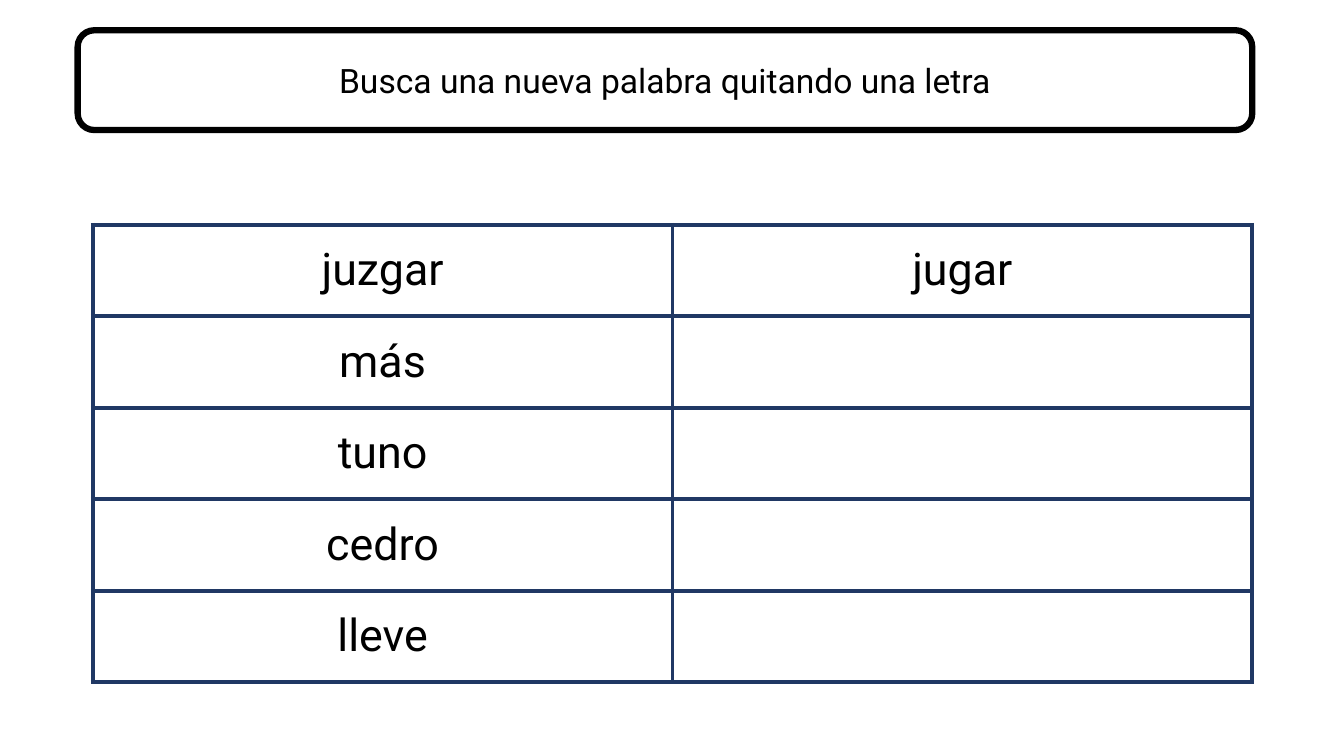
from lxml import etree
from pptx import Presentation
from pptx.dml.color import RGBColor
from pptx.enum import shapes, text
from pptx.oxml import ns
from pptx import util as u

COLORS = {"paper": "FFFFFF", "ink": "000000", "grid": "203864"}
FONT = "Roboto"
WORDS = [("juzgar", "jugar"), ("más", ""), ("tuno", ""), ("cedro", ""), ("lleve", "")]


def color(name):
    return RGBColor.from_string(COLORS[name])


def paint(obj, name):
    obj.fill.solid()
    obj.fill.fore_color.rgb = color(name)


def write(tf, words, size):
    p = tf.paragraphs[0]
    p.text = words
    p.alignment = text.PP_ALIGN.CENTER
    for r in p.runs:
        r.font.name = FONT
        r.font.size = u.Pt(size)
        r.font.color.rgb = color("ink")


def add_borders(cell, name, width):
    props = cell._tc.get_or_add_tcPr()
    for i, side in enumerate(("lnL", "lnR", "lnT", "lnB")):
        ln = etree.Element(ns.qn("a:" + side), w=str(u.Pt(width)))
        fill = etree.SubElement(ln, ns.qn("a:solidFill"))
        etree.SubElement(fill, ns.qn("a:srgbClr"), val=COLORS[name])
        props.insert(i, ln)


def add_instruction(slide, box, words):
    sp = slide.shapes.add_shape(shapes.MSO_SHAPE.ROUNDED_RECTANGLE, *box)
    sp.shadow.inherit = False
    paint(sp, "paper")
    sp.line.color.rgb = color("ink")
    sp.line.width = u.Pt(4.5)
    tf = sp.text_frame
    tf.word_wrap = True
    tf.vertical_anchor = text.MSO_ANCHOR.MIDDLE
    write(tf, words, 24)


def add_word_table(slide, box, rows):
    table = slide.shapes.add_table(len(rows), len(rows[0]), *box).table
    for row, words in zip(table.rows, rows):
        for cell, word in zip(row.cells, words):
            paint(cell, "paper")
            add_borders(cell, "grid", 3)
            cell.vertical_anchor = text.MSO_ANCHOR.MIDDLE
            write(cell.text_frame, word, 32)


def inches(*lengths):
    return [u.Inches(n) for n in lengths]


def main():
    prs = Presentation()
    prs.slide_width, prs.slide_height = inches(13.33, 7.5)
    slide = prs.slides.add_slide(prs.slide_layouts[6])
    add_instruction(slide, inches(0.77, 0.3, 11.65, 0.99),
                    "Busca una nueva palabra quitando una letra")
    add_word_table(slide, inches(0.92, 2.23, 11.5, 4.54), WORDS)
    prs.save("out.pptx")


if __name__ == "__main__":
    main()
